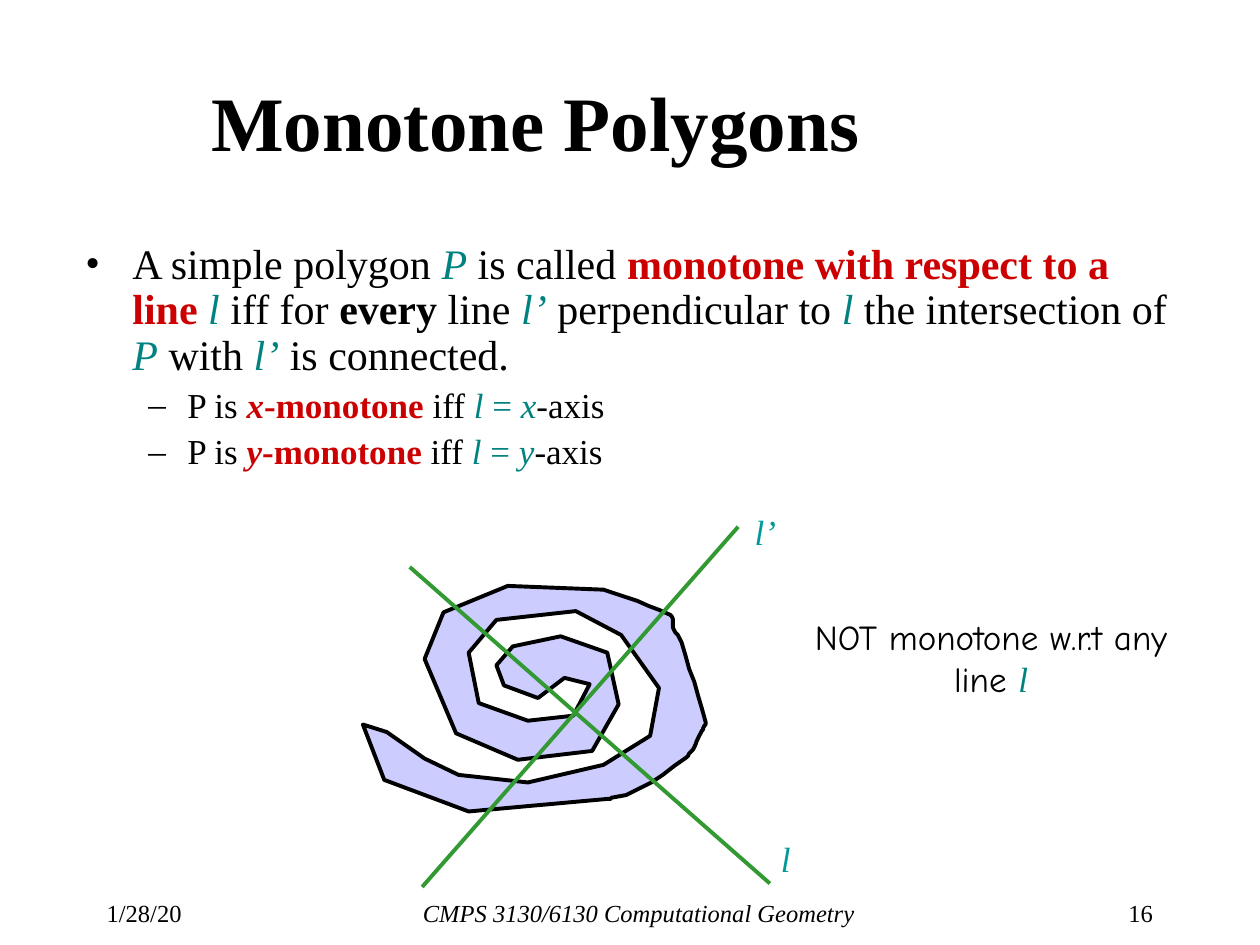
from dataclasses import dataclass

from lxml.etree import SubElement
from pptx import Presentation
from pptx.dml.color import RGBColor
from pptx.enum.shapes import MSO_CONNECTOR
from pptx.enum.text import MSO_ANCHOR, PP_ALIGN
from pptx.oxml.ns import qn
from pptx.util import Cm, Pt

BLACK = RGBColor(0x00, 0x00, 0x00)
RED = RGBColor(0xCC, 0x00, 0x00)
TEAL = RGBColor(0x00, 0x83, 0x80)
LABEL_TEAL = RGBColor(0x00, 0x99, 0x99)
GREEN = RGBColor(0x33, 0x99, 0x33)
LAVENDER = RGBColor(0xCC, 0xCC, 0xFF)

SERIF = "Times New Roman"
HANDWRITTEN = "Comic Neue"
STROKE = Pt(2.25)
CURVE_STEPS = 6

PLAIN = {"name": SERIF, "bold": False, "italic": False}
BOLD = PLAIN | {"bold": True}
ITALIC = PLAIN | {"italic": True}
BOLD_ITALIC = BOLD | {"italic": True}
CASUAL = PLAIN | {"name": HANDWRITTEN}


@dataclass(frozen=True)
class Run:
    text: str
    style: dict
    color: RGBColor = BLACK


@dataclass(frozen=True)
class Paragraph:
    runs: list[Run]
    size: int
    align: PP_ALIGN = PP_ALIGN.LEFT


@dataclass(frozen=True)
class Bullet:
    mark: str
    indent: float
    hanging: float
    level: int


@dataclass(frozen=True)
class TextBlock:
    left: float
    top: float
    width: float
    height: float
    paragraph: Paragraph
    anchor: MSO_ANCHOR = MSO_ANCHOR.TOP


@dataclass(frozen=True)
class Line:
    start: tuple[float, float]
    end: tuple[float, float]


def symbol(text: str) -> Run:
    return Run(text, ITALIC, TEAL)


def axis_definition(axis: str) -> Paragraph:
    return Paragraph([
        Run("P is ", PLAIN), Run(axis, BOLD_ITALIC, RED),
        Run("-monotone ", BOLD, RED), Run("iff ", PLAIN), symbol("l"),
        Run(" = ", PLAIN, TEAL), symbol(axis), Run("-axis", PLAIN),
    ], 20)


DEFINITION = Paragraph([
    Run("A simple polygon ", PLAIN), symbol("P"), Run(" is called ", PLAIN),
    Run("monotone with respect to a line ", BOLD, RED), symbol("l "),
    Run("iff for ", PLAIN), Run("every", BOLD), Run(" line ", PLAIN),
    symbol("l’"), Run(" perpendicular to ", PLAIN), symbol("l"),
    Run(" the intersection of ", PLAIN), symbol("P"), Run(" with ", PLAIN),
    symbol("l’"), Run(" is connected.", PLAIN),
], 24)

MAIN_POINT = Bullet("•", 0.95, 0.95, 0)
SUB_POINT = Bullet("–", 2.06, 0.79, 1)
BODY = [
    (DEFINITION, MAIN_POINT),
    (axis_definition("x"), SUB_POINT),
    (axis_definition("y"), SUB_POINT),
]

HEADER_AND_FOOTER = [
    TextBlock(1.9, 17.98, 2.41, 0.64, Paragraph([Run("1/28/20", PLAIN)], 14)),
    TextBlock(4.83, 17.98, 16.1, 0.64, Paragraph(
        [Run("CMPS 3130/6130 Computational Geometry", ITALIC)], 14, PP_ALIGN.CENTER)),
    TextBlock(21.41, 17.98, 2.08, 0.64,
              Paragraph([Run("16", PLAIN)], 14, PP_ALIGN.RIGHT)),
    TextBlock(4.01, 0.84, 20.96, 3.18,
              Paragraph([Run("Monotone Polygons", BOLD)], 44), MSO_ANCHOR.MIDDLE),
]

ANNOTATIONS = [
    TextBlock(14.86, 16.76, 1.96, 1.09,
              Paragraph([Run("l", ITALIC, LABEL_TEAL)], 20, PP_ALIGN.CENTER)),
    TextBlock(14.45, 10.16, 1.96, 1.09,
              Paragraph([Run("l’", ITALIC, LABEL_TEAL)], 20, PP_ALIGN.CENTER)),
    TextBlock(15.8, 12.29, 8.36, 1.96, Paragraph(
        [Run("NOT monotone w.r.t any line ", CASUAL), symbol("l")], 20, PP_ALIGN.CENTER)),
]

LINES = [
    Line((15.52, 17.81), (8.26, 11.43)),
    Line((8.51, 17.88), (14.88, 10.62)),
]

SPIRAL_UNIT = Cm(0.0254)
SPIRAL = [
    (448, 538), (427, 554), (400, 544), (394, 528), (407, 513), (445, 505),
    (482, 518), (491, 559), (470, 596), (411, 603), (362, 582), (337, 523),
    (352, 486), (403, 465), (479, 468),
    (497, 474, 515, 480, 532, 488), (535, 490, 533, 495, 534, 498),
    (536, 502, 539, 506, 541, 510), (547, 531, 555, 551, 560, 573),
    (561, 575, 558, 578, 557, 580), (555, 584, 553, 588, 551, 593),
    (549, 596, 545, 601, 545, 601), (525, 615, 509, 630, 486, 633),
    (485, 634, 483, 634, 483, 634),
    (372, 644), (305, 619), (288, 575), (307, 581), (337, 602), (364, 615),
    (419, 621), (479, 607), (516, 584), (523, 546), (493, 504), (457, 485),
    (394, 492), (372, 518), (380, 558), (419, 572), (455, 568), (468, 543),
]


def flatten(outline: list[tuple[int, ...]]) -> list[tuple[float, float]]:
    points = []
    for segment in outline:
        if len(segment) == 2:
            points.append(segment)
            continue
        controls = [points[-1], segment[:2], segment[2:4], segment[4:]]
        for step in range(1, CURVE_STEPS + 1):
            t = step / CURVE_STEPS
            weights = ((1 - t) ** 3, 3 * t * (1 - t) ** 2, 3 * t * t * (1 - t), t ** 3)
            points.append(tuple(
                sum(w * c[axis] for w, c in zip(weights, controls)) for axis in (0, 1)))
    return points


def add_frame(slide, left: float, top: float, width: float, height: float,
              anchor: MSO_ANCHOR = MSO_ANCHOR.TOP):
    frame = slide.shapes.add_textbox(Cm(left), Cm(top), Cm(width), Cm(height)).text_frame
    frame.word_wrap = True
    frame.vertical_anchor = anchor
    return frame


def write(target, content: Paragraph) -> None:
    target.alignment = content.align
    for part in content.runs:
        run = target.add_run()
        run.text = part.text
        for attribute, value in (part.style | {"size": Pt(content.size)}).items():
            setattr(run.font, attribute, value)
        run.font.color.rgb = part.color


def apply_bullet(target, bullet: Bullet) -> None:
    for attribute, value in {"level": bullet.level, "line_spacing": 0.9,
                             "space_before": Pt(5)}.items():
        setattr(target, attribute, value)
    properties = target._p.get_or_add_pPr()
    properties.set("marL", str(Cm(bullet.indent)))
    properties.set("indent", str(-Cm(bullet.hanging)))
    color = SubElement(properties, qn("a:buClr"))
    SubElement(color, qn("a:srgbClr")).set("val", str(BLACK))
    SubElement(properties, qn("a:buFont")).set("typeface", SERIF)
    SubElement(properties, qn("a:buChar")).set("char", bullet.mark)


def draw_text(slide, block: TextBlock) -> None:
    frame = add_frame(slide, block.left, block.top, block.width, block.height, block.anchor)
    write(frame.paragraphs[0], block.paragraph)


def draw_body(slide) -> None:
    frame = add_frame(slide, 1.47, 4.78, 22.63, 4.95)
    for index, (content, bullet) in enumerate(BODY):
        target = frame.add_paragraph() if index else frame.paragraphs[0]
        write(target, content)
        apply_bullet(target, bullet)


def draw_spiral(slide) -> None:
    start, *rest = flatten(SPIRAL)
    builder = slide.shapes.build_freeform(*start, scale=SPIRAL_UNIT)
    builder.add_line_segments(rest, close=True)
    spiral = builder.convert_to_shape()
    spiral.shadow.inherit = False
    spiral.fill.solid()
    spiral.fill.fore_color.rgb = LAVENDER
    spiral.line.color.rgb = BLACK
    spiral.line.width = STROKE


def draw_line(slide, line: Line) -> None:
    ends = [Cm(value) for value in (*line.start, *line.end)]
    connector = slide.shapes.add_connector(MSO_CONNECTOR.STRAIGHT, *ends)
    connector.line.color.rgb = GREEN
    connector.line.width = STROKE
    SubElement(connector._element.spPr, qn("a:effectLst"))


def main() -> None:
    presentation = Presentation()
    presentation.slide_width, presentation.slide_height = Cm(25.4), Cm(19.05)
    slide = presentation.slides.add_slide(presentation.slide_layouts[6])
    for block in HEADER_AND_FOOTER:
        draw_text(slide, block)
    draw_body(slide)
    draw_spiral(slide)
    for line in LINES:
        draw_line(slide, line)
    for block in ANNOTATIONS:
        draw_text(slide, block)
    presentation.save("out.pptx")


if __name__ == "__main__":
    main()
